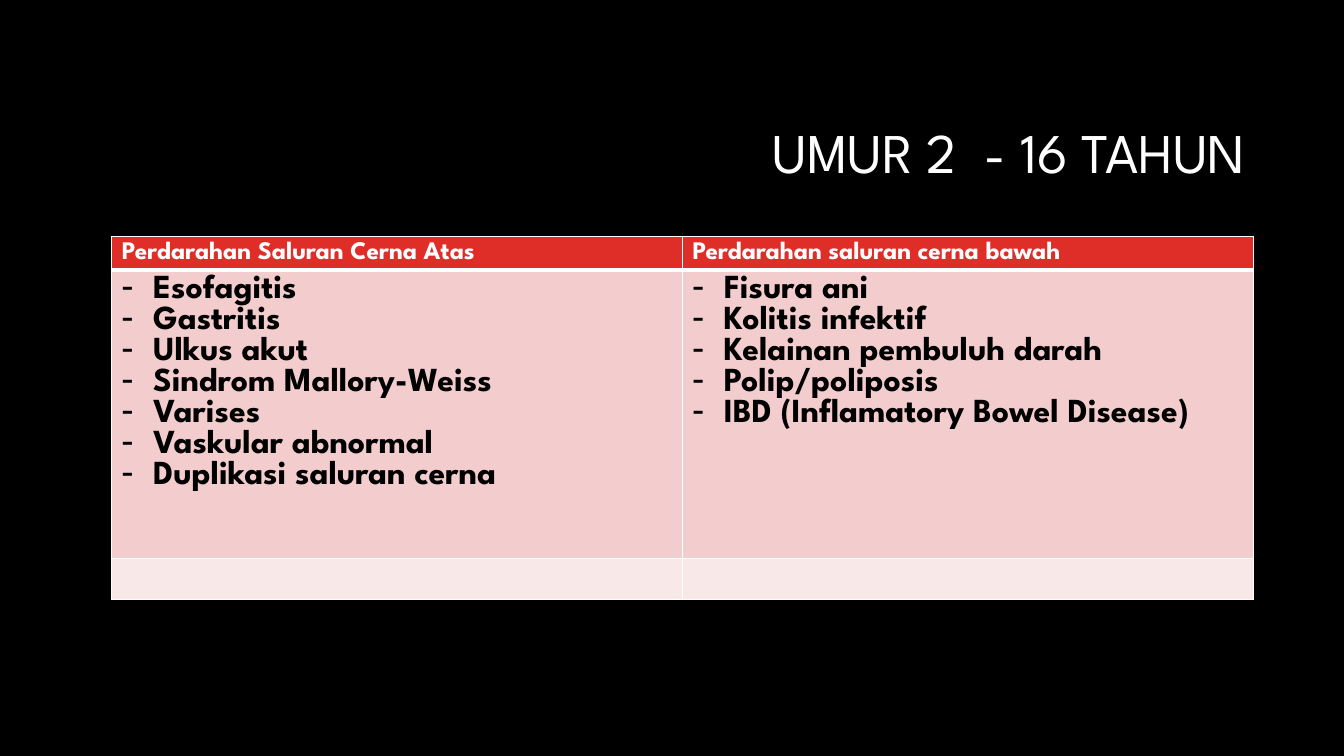
from lxml.etree import SubElement as Sub
from pptx import Presentation
from pptx.dml.color import RGBColor
from pptx.enum.text import MSO_ANCHOR as Anchor, PP_ALIGN as Align
from pptx.oxml.ns import qn
from pptx.util import Inches, Pt

FACE = "League Spartan"
WHITE, BLACK, RED = "FFFFFF", "000000", "DF2E28"
PINK, PALE = "F3CDCD", "F9E8E8"

HEADS = ["Perdarahan Saluran Cerna Atas", "Perdarahan saluran cerna bawah"]
LISTS = [
    ["Esofagitis", "Gastritis", "Ulkus akut", "Sindrom Mallory-Weiss",
     "Varises", "Vaskular abnormal", "Duplikasi saluran cerna"],
    ["Fisura ani", "Kolitis infektif", "Kelainan pembuluh darah",
     "Polip/poliposis", "IBD (Inflamatory Bowel Disease)"],
]


def color(code):
    return RGBColor.from_string(code)


def style(para, size, code, bold=False):
    font = para.font
    font.name, font.size, font.bold = FACE, Pt(size), bold
    font.color.rgb = color(code)


def dash(para):
    props = para._p.get_or_add_pPr()
    props.set("marL", str(Inches(0.31)))
    props.set("indent", str(-Inches(0.31)))
    Sub(props, qn("a:buFontTx"))
    Sub(props, qn("a:buChar"), char="-")


def border(cell, side, width):
    props = cell._tc.get_or_add_tcPr()
    line = Sub(props, qn(f"a:ln{side}"), w=str(Pt(width)))
    fill = Sub(line, qn("a:solidFill"))
    Sub(fill, qn("a:srgbClr"), val=WHITE)


def paint(cell, code, top=1, bottom=1):
    for side, width in (("L", 1), ("R", 1), ("T", top), ("B", bottom)):
        border(cell, side, width)
    cell.fill.solid()
    cell.fill.fore_color.rgb = color(code)


def write(cell, lines, size, code, marked=False):
    frame = cell.text_frame
    frame.text = "\n".join(lines)
    for para in frame.paragraphs:
        if marked:
            dash(para)
        style(para, size, code, bold=True)


def add_title(slide, text):
    title = slide.shapes.title
    title.left, title.top = Inches(3.17), Inches(0.84)
    title.width, title.height = Inches(9.42), Inches(1.41)
    frame = title.text_frame
    frame.text = text
    frame.vertical_anchor = Anchor.MIDDLE
    para = frame.paragraphs[0]
    para.alignment = Align.RIGHT
    para.line_spacing = 0.9
    style(para, 40, WHITE)


def add_grid(slide):
    rows = [0.33, 2.86, 0.41]
    grid = slide.shapes.add_table(
        len(rows), len(HEADS), Inches(1.11), Inches(2.35),
        Inches(11.32), Inches(sum(rows))).table
    for row, high in zip(grid.rows, rows):
        row.height = Inches(high)
    for col, (head, items) in enumerate(zip(HEADS, LISTS)):
        top, body, last = (grid.cell(row, col) for row in range(len(rows)))
        write(top, [head], 18, WHITE)
        paint(top, RED, bottom=3)
        write(body, items, 24, BLACK, marked=True)
        paint(body, PINK, top=3)
        paint(last, PALE)


def main():
    deck = Presentation()
    deck.slide_width, deck.slide_height = Inches(13.33), Inches(7.5)
    slide = deck.slides.add_slide(deck.slide_layouts[5])

    # Black background
    back = slide.background.fill
    back.solid()
    back.fore_color.rgb = color(BLACK)

    # Title and table
    add_title(slide, "UMUR 2  - 16 TAHUN ")
    add_grid(slide)
    deck.save("out.pptx")


if __name__ == "__main__":
    main()
